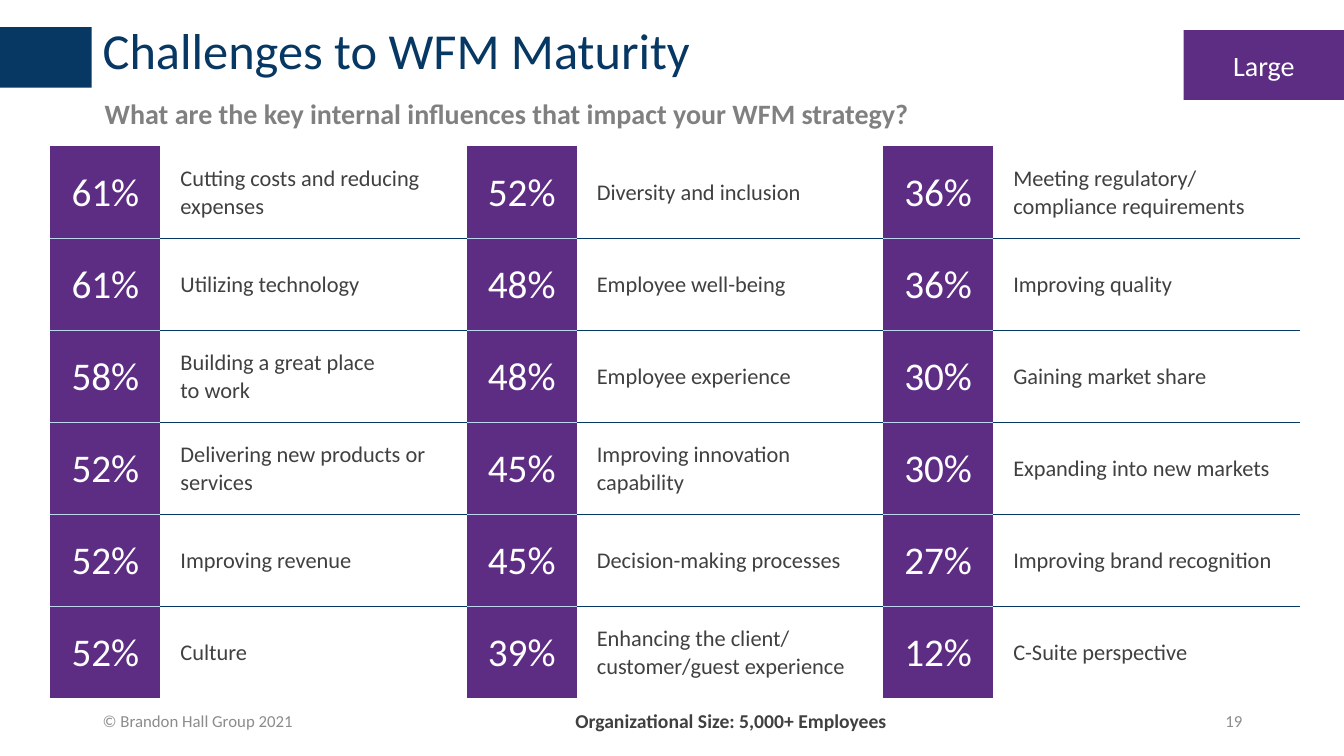
from pptx import Presentation
from pptx.dml.color import RGBColor
from pptx.enum.shapes import MSO_SHAPE
from pptx.enum.text import MSO_ANCHOR, PP_ALIGN
from pptx.util import Inches, Pt
from lxml.etree import SubElement
from pptx.oxml.ns import qn

# Content
TITLE = "Challenges to WFM Maturity"
QUESTION = "What are the key internal influences that impact your WFM strategy?"
GROUPS = [
    [("61%", "Cutting costs and reducing expenses"),
     ("61%", "Utilizing technology"),
     ("58%", "Building a great place\nto work"),
     ("52%", "Delivering new products or services"),
     ("52%", "Improving revenue"),
     ("52%", "Culture")],
    [("52%", "Diversity and inclusion"),
     ("48%", "Employee well-being"),
     ("48%", "Employee experience"),
     ("45%", "Improving innovation\ncapability"),
     ("45%", "Decision-making processes"),
     ("39%", "Enhancing the client/\ncustomer/guest experience")],
    [("36%", "Meeting regulatory/ compliance requirements"),
     ("36%", "Improving quality"),
     ("30%", "Gaining market share"),
     ("30%", "Expanding into new markets"),
     ("27%", "Improving brand recognition"),
     ("12%", "C-Suite perspective")],
]
COLORS = {"navy": "073763", "purple": "5D2D84", "white": "FFFFFF",
          "dark": "404040", "gray": "808080", "pale": "8C8C8C", "sky": "BDD7EE"}
PLAIN = "{2D5ABB26-0587-4C30-8999-92F81FD0307C}"  # table style without grid

# Layout in inches
LEFT, TOP, PITCH, HIGH = 0.5, 1.45, 4.13, 5.48
WIDTHS = (1.09, 3.04)


def color(name):
    return RGBColor.from_string(COLORS[name])


def write(text, frame, size=16, tint="dark", bold=False, align=PP_ALIGN.LEFT, space=None):
    for i, line in enumerate(text.split("\n")):
        para = frame.paragraphs[0] if i == 0 else frame.add_paragraph()
        para.alignment = align
        para.line_spacing = space
        run = para.add_run()
        run.text = line
        font = run.font
        font.name, font.size, font.bold = "Calibri", Pt(size), bold
        font.color.rgb = color(tint)


def add_box(slide, place, text, anchor=MSO_ANCHOR.TOP, **style):
    frame = slide.shapes.add_textbox(*map(Inches, place)).text_frame
    frame.word_wrap = True
    frame.vertical_anchor = anchor
    write(text, frame, **style)


def add_block(slide, place, tint):
    block = slide.shapes.add_shape(MSO_SHAPE.RECTANGLE, *map(Inches, place))
    block.shadow.inherit = False
    block.fill.solid()
    block.fill.fore_color.rgb = color(tint)
    block.line.fill.background()
    return block


def add_rule(cell, side, tint):
    line = SubElement(cell._tc.get_or_add_tcPr(), qn("a:" + side), w=str(Pt(1)))
    fill = SubElement(line, qn("a:solidFill"))
    SubElement(fill, qn("a:srgbClr"), val=COLORS[tint])


def add_group(slide, left, items):
    count = len(items)
    frame = slide.shapes.add_table(count, 2, Inches(left), Inches(TOP),
                                   Inches(sum(WIDTHS)), Inches(HIGH))
    table = frame.table
    table.first_row = table.horz_banding = False
    table._tbl.tblPr.find(qn("a:tableStyleId")).text = PLAIN
    for col, width in zip(table.columns, WIDTHS):
        col.width = Inches(width)
    for row, texts in enumerate(items):
        for col, text in enumerate(texts):
            cell = table.cell(row, col)
            cell.vertical_anchor = MSO_ANCHOR.MIDDLE
            cell.margin_left = Inches(0.2 if col else 0.01)
            cell.margin_top = cell.margin_right = Inches(0.01)
            cell.margin_bottom = 0
            # Rules between rows only
            tint = "navy" if col else "sky"
            if row > 0:
                add_rule(cell, "lnT", tint)
            if row < count - 1:
                add_rule(cell, "lnB", tint)
            if col:
                cell.fill.background()
                write(text, cell.text_frame)
            else:
                cell.fill.solid()
                cell.fill.fore_color.rgb = color("purple")
                write(text, cell.text_frame, size=28, tint="white", align=PP_ALIGN.CENTER)


def main():
    deck = Presentation()
    deck.slide_width, deck.slide_height = Inches(13.33), Inches(7.5)
    slide = deck.slides.add_slide(deck.slide_layouts[6])

    # Header
    add_block(slide, (0, 0.27, 0.91, 0.6), "navy")
    add_box(slide, (0.92, 0.21, 11.5, 0.7), TITLE, size=36, tint="navy", space=0.9)
    badge = add_block(slide, (11.74, 0.3, 1.59, 0.69), "purple")
    badge.text_frame.vertical_anchor = MSO_ANCHOR.MIDDLE
    write("Large", badge.text_frame, size=20, tint="white", align=PP_ALIGN.CENTER)
    add_box(slide, (0.94, 0.91, 8.5, 0.44), QUESTION, size=20, tint="gray", bold=True)

    # Three tables side by side
    for i, items in enumerate(GROUPS):
        add_group(slide, LEFT + i * PITCH, items)

    # Footer
    add_box(slide, (0.92, 6.95, 4.5, 0.4), "© Brandon Hall Group 2021",
            anchor=MSO_ANCHOR.MIDDLE, size=12, tint="pale")
    add_box(slide, (4.59, 6.98, 5.32, 0.34), "Organizational Size: 5,000+ Employees",
            size=14, bold=True, align=PP_ALIGN.CENTER)
    add_box(slide, (9.42, 6.95, 3, 0.4), "19", anchor=MSO_ANCHOR.MIDDLE,
            size=12, tint="pale", align=PP_ALIGN.RIGHT)
    deck.save("out.pptx")


if __name__ == "__main__":
    main()
